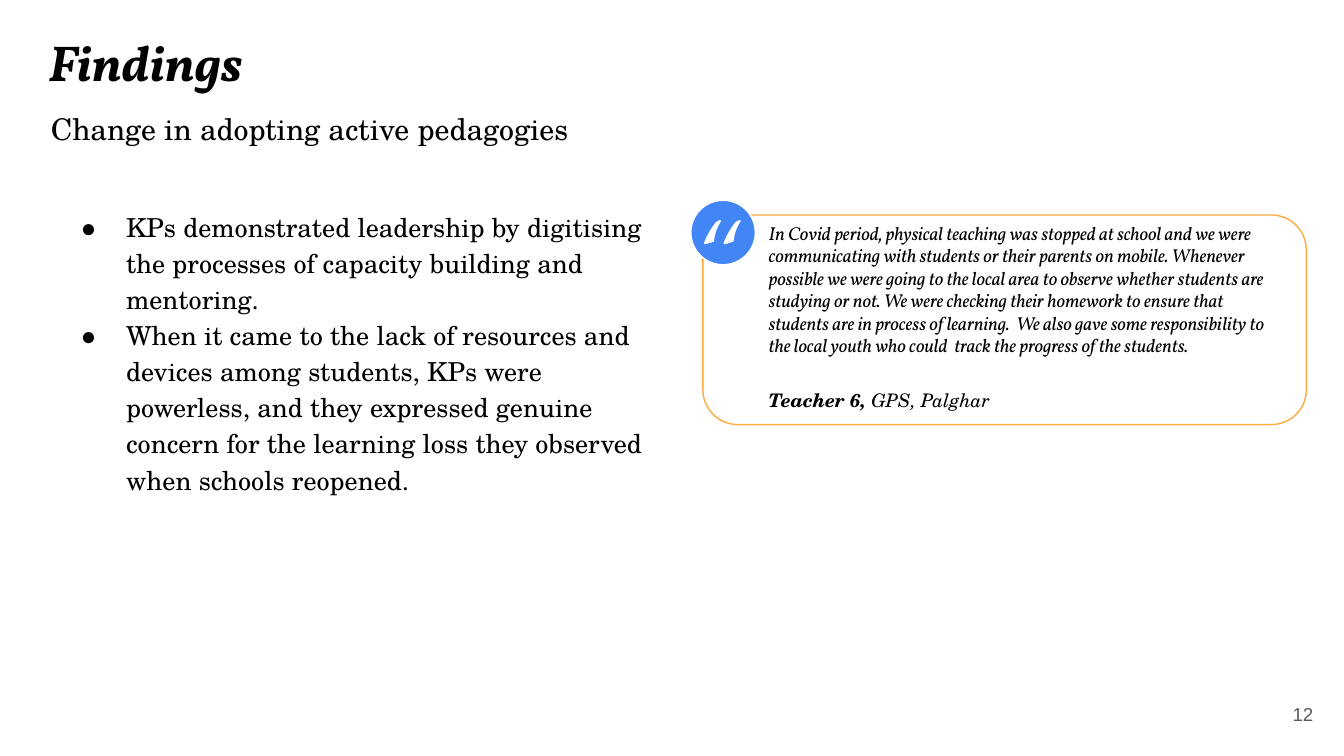
from dataclasses import dataclass

from lxml.etree import SubElement
from pptx import Presentation
from pptx.dml.color import RGBColor
from pptx.enum.shapes import MSO_SHAPE
from pptx.enum.text import MSO_ANCHOR, MSO_AUTO_SIZE, PP_ALIGN
from pptx.oxml.ns import qn
from pptx.util import Inches, Pt


@dataclass(frozen=True)
class Theme:
    black: str = "000000"
    white: str = "FFFFFF"
    grey: str = "595959"
    blue: str = "4285F4"
    orange: str = "FFAB40"
    display: str = "Vollkorn"
    body: str = "TeX Gyre Schola"
    mark: str = "TeX Gyre Pagella"
    number: str = "Arial"
    title_size: int = 27
    subtitle_size: int = 16
    body_size: int = 14
    small_size: int = 10
    mark_size: int = 50


theme = Theme()


def prepare_frame(box, anchor=MSO_ANCHOR.TOP):
    frame = box.text_frame
    frame.word_wrap = True
    frame.auto_size = MSO_AUTO_SIZE.NONE
    frame.vertical_anchor = anchor
    frame.margin_left = frame.margin_right = Inches(0.1)
    frame.margin_top = frame.margin_bottom = Inches(0.1)
    return frame


def add_span(para, text, font, size, color=theme.black, bold=False, italic=False):
    span = para.add_run()
    span.text = text
    span.font.name = font
    span.font.size = Pt(size)
    span.font.color.rgb = RGBColor.from_string(color)
    span.font.bold = bold
    span.font.italic = italic


deck = Presentation()
deck.slide_width = Inches(10)
deck.slide_height = Inches(10 * 9 / 16)
page = deck.slides.add_slide(deck.slide_layouts[5])

title = page.shapes.title
title.left, title.top = Inches(0.26), Inches(0.13)
title.width, title.height = Inches(4.54), Inches(0.63)
para = prepare_frame(title).paragraphs[0]
para.alignment = PP_ALIGN.LEFT
add_span(para, "Findings", theme.display, theme.title_size, bold=True, italic=True)

subtitle = page.shapes.add_textbox(Inches(0.28), Inches(0.72), Inches(9.32), Inches(0.43))
para = prepare_frame(subtitle).paragraphs[0]
add_span(para, "Change in adopting active pedagogies", theme.body, theme.subtitle_size)

findings = [
    "KPs demonstrated leadership by digitising the processes of capacity building and mentoring.",
    "When it came to the lack of resources and devices among students, KPs were powerless, "
    "and they expressed genuine concern for the learning loss they observed when schools reopened.",
]
findings_box = page.shapes.add_textbox(Inches(0.34), Inches(1.44), Inches(4.66), Inches(2.12))
frame = prepare_frame(findings_box)
for index, finding in enumerate(findings):
    para = frame.add_paragraph() if index else frame.paragraphs[0]
    para.line_spacing = 1.15
    properties = para._p.get_or_add_pPr()
    properties.set("marL", str(Inches(0.5)))
    properties.set("indent", str(Inches(-0.35)))
    bullet_color = SubElement(properties, qn("a:buClr"))
    SubElement(bullet_color, qn("a:srgbClr"), val=theme.black)
    SubElement(properties, qn("a:buFont"), typeface=theme.body)
    SubElement(properties, qn("a:buChar"), char="●")
    add_span(para, finding, theme.body, theme.body_size)

card = page.shapes.add_shape(
    MSO_SHAPE.ROUNDED_RECTANGLE, Inches(5.23), Inches(1.6), Inches(4.49), Inches(1.56)
)
badge = page.shapes.add_shape(
    MSO_SHAPE.OVAL, Inches(5.14), Inches(1.49), Inches(0.48), Inches(0.48)
)
for shape, fill, line in [
    (card, theme.white, theme.orange),
    (badge, theme.blue, theme.white),
]:
    shape.shadow.inherit = False
    shape.fill.solid()
    shape.fill.fore_color.rgb = RGBColor.from_string(fill)
    shape.line.color.rgb = RGBColor.from_string(line)
    shape.line.width = Pt(0.75)

quote_box = page.shapes.add_textbox(Inches(5.62), Inches(1.55), Inches(4.02), Inches(1.38))
para = prepare_frame(quote_box).paragraphs[0]
quote = (
    "In Covid period, physical teaching was stopped at school and we were communicating with "
    "students or their parents on mobile. Whenever possible we were going to the local area to "
    "observe whether students are studying or not. We were checking their homework to ensure "
    "that students are in process of learning.  We also gave some responsibility to the local "
    "youth who could  track the progress of the students."
)
add_span(para, quote, theme.display, theme.small_size, italic=True)

mark_box = page.shapes.add_textbox(Inches(5.11), Inches(1.34), Inches(0.53), Inches(0.63))
para = prepare_frame(mark_box).paragraphs[0]
add_span(para, "“", theme.mark, theme.mark_size, theme.white)

speaker_box = page.shapes.add_textbox(Inches(5.62), Inches(2.79), Inches(3.14), Inches(0.37))
para = prepare_frame(speaker_box).paragraphs[0]
add_span(para, "Teacher 6, ", theme.body, theme.small_size, bold=True, italic=True)
add_span(para, "GPS, Palghar", theme.body, theme.small_size, italic=True)

number_box = page.shapes.add_textbox(Inches(9.27), Inches(5.1), Inches(0.6), Inches(0.43))
para = prepare_frame(number_box, MSO_ANCHOR.MIDDLE).paragraphs[0]
para.alignment = PP_ALIGN.RIGHT
add_span(para, "12", theme.number, theme.small_size, theme.grey)

deck.save("out.pptx")
